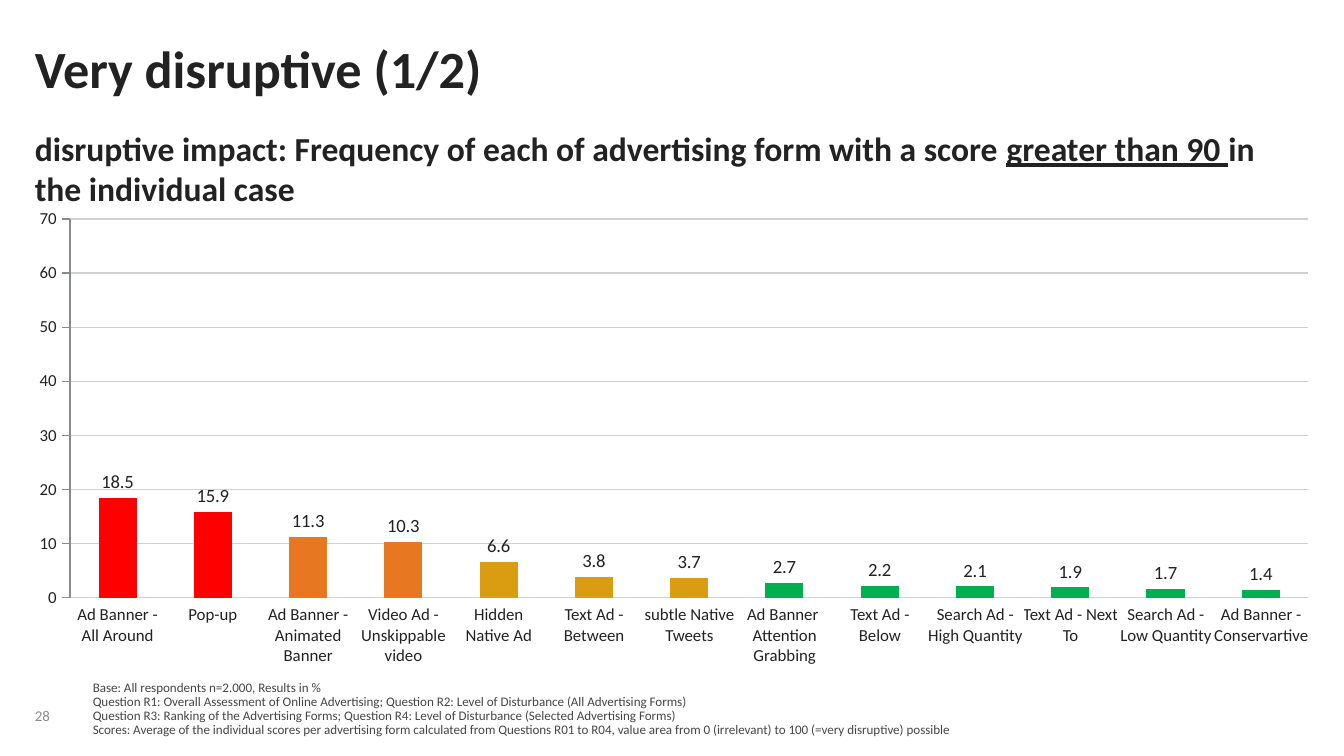
from lxml.etree import SubElement
from pptx import Presentation
from pptx.chart.data import CategoryChartData
from pptx.dml.color import RGBColor
from pptx.enum.chart import XL_CHART_TYPE, XL_LABEL_POSITION, XL_TICK_MARK
from pptx.enum.text import MSO_ANCHOR, MSO_AUTO_SIZE, PP_ALIGN
from pptx.oxml import parse_xml
from pptx.oxml.ns import nsdecls, qn
from pptx.util import Inches, Pt

FONT, INK, RED, ORANGE, GOLD, GREEN = (
    "Calibri", "222223", "FF0000", "E87722", "DA9D11", "00B050")
TITLE = "Very disruptive (1/2)"
LEAD = [
    ("disruptive impact: Frequency of each of advertising form with a score ", False),
    ("greater than 90 ", True),
    ("in the individual case", False),
]
ADS = [
    ("Ad Banner - All Around", 18.5, RED),
    ("Pop-up", 15.9, RED),
    ("Ad Banner - Animated Banner", 11.3, ORANGE),
    ("Video Ad - Unskippable video", 10.3, ORANGE),
    ("Hidden Native Ad", 6.6, GOLD),
    ("Text Ad - Between", 3.8, GOLD),
    ("subtle Native Tweets", 3.7, GOLD),
    ("Ad Banner \vAttention Grabbing", 2.7, GREEN),
    ("Text Ad - Below", 2.2, GREEN),
    ("Search Ad - High Quantity", 2.1, GREEN),
    ("Text Ad - Next To", 1.9, GREEN),
    ("Search Ad - Low Quantity", 1.7, GREEN),
    ("Ad Banner - Conservartive", 1.4, GREEN),
]
NOTES = [
    "Base: All respondents n=2.000, Results in %",
    "Question R1: Overall Assessment of Online Advertising; Question R2: Level of Disturbance (All Advertising Forms)",
    "Question R3: Ranking of the Advertising Forms; Question R4: Level of Disturbance (Selected Advertising Forms)",
    "Scores: Average of the individual scores per advertising form calculated from Questions R01 to R04, value area from 0 (irrelevant) to 100 (=very disruptive) possible",
]
PLOT = {"x": 0.027, "y": 0.081, "w": 0.954, "h": 0.762}


def color(code):
    """Turn a hex string into a colour."""
    return RGBColor.from_string(code)


def style(font, size, code=INK, bold=False):
    """Set the face, size, colour and weight of a font."""
    font.name, font.size, font.bold = FONT, Pt(size), bold
    font.color.rgb = color(code)


def place(shape, left, top, width, height):
    """Move and size a shape, given inches."""
    shape.left, shape.top = Inches(left), Inches(top)
    shape.width, shape.height = Inches(width), Inches(height)


def frame(shape, anchor=MSO_ANCHOR.TOP, wrap=True):
    """Clear the margins of a text frame and return it."""
    text = shape.text_frame
    text.margin_left = text.margin_right = text.margin_top = text.margin_bottom = 0
    text.vertical_anchor, text.word_wrap = anchor, wrap
    text.auto_size = MSO_AUTO_SIZE.NONE
    return text


def add_title(slide):
    """Fill the title placeholder."""
    title = slide.shapes.title
    place(title, 0.26, 0.27, 7.35, 0.92)
    text = frame(title)
    text.text = TITLE
    para = text.paragraphs[0]
    para.alignment = PP_ALIGN.LEFT
    style(para.runs[0].font, 28, bold=True)


def add_lead(slide):
    """Add the subtitle with its underlined part."""
    box = slide.shapes.add_textbox(0, 0, 0, 0)
    place(box, 0.26, 0.95, 9.24, 0.25)
    para = frame(box).paragraphs[0]
    for words, under in LEAD:
        run = para.add_run()
        run.text = words
        style(run.font, 18, bold=True)
        run.font.underline = under


def add_notes(slide):
    """Fill the body placeholder with the source notes."""
    body = slide.placeholders[1]
    place(body, 0.69, 5.07, 6.7, 0.42)
    text = frame(body, MSO_ANCHOR.BOTTOM)
    text.text = "\n".join(NOTES)
    for para in text.paragraphs:
        props = para._p.get_or_add_pPr()
        props.set("marL", "0")
        props.set("indent", "0")
        SubElement(props, qn("a:buNone"))
        para.line_spacing, para.space_before = 0.9, Pt(0)
        style(para.runs[0].font, 7, "444647")


def add_page(slide):
    """Add the page number."""
    box = slide.shapes.add_textbox(0, 0, 0, 0)
    place(box, 0.26, 5.13, 0.34, 0.26)
    text = frame(box, MSO_ANCHOR.BOTTOM, False)
    text.text = "28"
    text.paragraphs[0].line_spacing = 0.85
    style(text.paragraphs[0].runs[0].font, 8, "888B8D")


def add_bars(slide):
    """Add the column chart with one colour per score band."""
    data = CategoryChartData()
    data.categories = [str(i + 1) for i in range(len(ADS))]
    data.add_series("Series 1", [score for _, score, _ in ADS])
    chart = slide.shapes.add_chart(
        XL_CHART_TYPE.COLUMN_CLUSTERED, Inches(0.26), Inches(1.33),
        Inches(9.66), Inches(3.7), data).chart
    chart.has_legend = chart.has_title = False
    style(chart.font, 10)
    chart.category_axis.visible = False
    axis = chart.value_axis
    axis.minimum_scale, axis.maximum_scale, axis.major_unit = 0, 70, 10
    axis.major_tick_mark = XL_TICK_MARK.OUTSIDE
    axis.tick_labels.number_format = "0"
    axis.tick_labels.number_format_is_linked = False
    style(axis.tick_labels.font, 9)
    axis.format.line.color.rgb = color("888B8D")
    grid = axis.major_gridlines.format.line
    grid.color.rgb, grid.width = color("CFD1D1"), Pt(0.75)
    plot = chart.plots[0]
    plot.gap_width, plot.vary_by_categories = 150, False
    bars = plot.series[0]
    bars.format.fill.solid()
    bars.format.fill.fore_color.rgb = color(GREEN)
    for i, (_, _, code) in enumerate(ADS):
        if code != GREEN:
            fill = bars.points[i].format.fill
            fill.solid()
            fill.fore_color.rgb = color(code)
    labels = bars.data_labels
    labels.show_value, labels.position = True, XL_LABEL_POSITION.OUTSIDE_END
    labels.number_format, labels.number_format_is_linked = "0.0", False
    style(labels.font, 10)
    area = chart._chartSpace.chart.plotArea
    for old in area.findall(qn("c:layout")):
        area.remove(old)
    sizes = "".join(f'<c:{key} val="{val}"/>' for key, val in PLOT.items())
    area.insert(0, parse_xml(
        f'<c:layout {nsdecls("c")}><c:manualLayout><c:layoutTarget val="inner"/>'
        f'<c:xMode val="edge"/><c:yMode val="edge"/>{sizes}'
        '</c:manualLayout></c:layout>'))


def add_names(slide):
    """Add the table that names each column."""
    table = slide.shapes.add_table(
        1, len(ADS), Inches(0.52), Inches(4.5), Inches(9.22), Inches(0.45)).table
    table.first_row = table.horz_banding = False
    for cell, (name, _, _) in zip(table.rows[0].cells, ADS):
        cell.fill.background()
        cell.margin_left = cell.margin_right = cell.margin_top = cell.margin_bottom = 0
        para = cell.text_frame.paragraphs[0]
        para.text = name
        para.alignment = PP_ALIGN.CENTER
        for run in para.runs:
            style(run.font, 9)


def main():
    """Build and save the slide."""
    deck = Presentation()
    deck.slide_width = Inches(10)
    deck.slide_height = deck.slide_width * 9 // 16
    slide = deck.slides.add_slide(deck.slide_layouts[1])
    for add in (add_page, add_bars, add_title, add_lead, add_notes, add_names):
        add(slide)
    deck.save("out.pptx")


if __name__ == "__main__":
    main()
